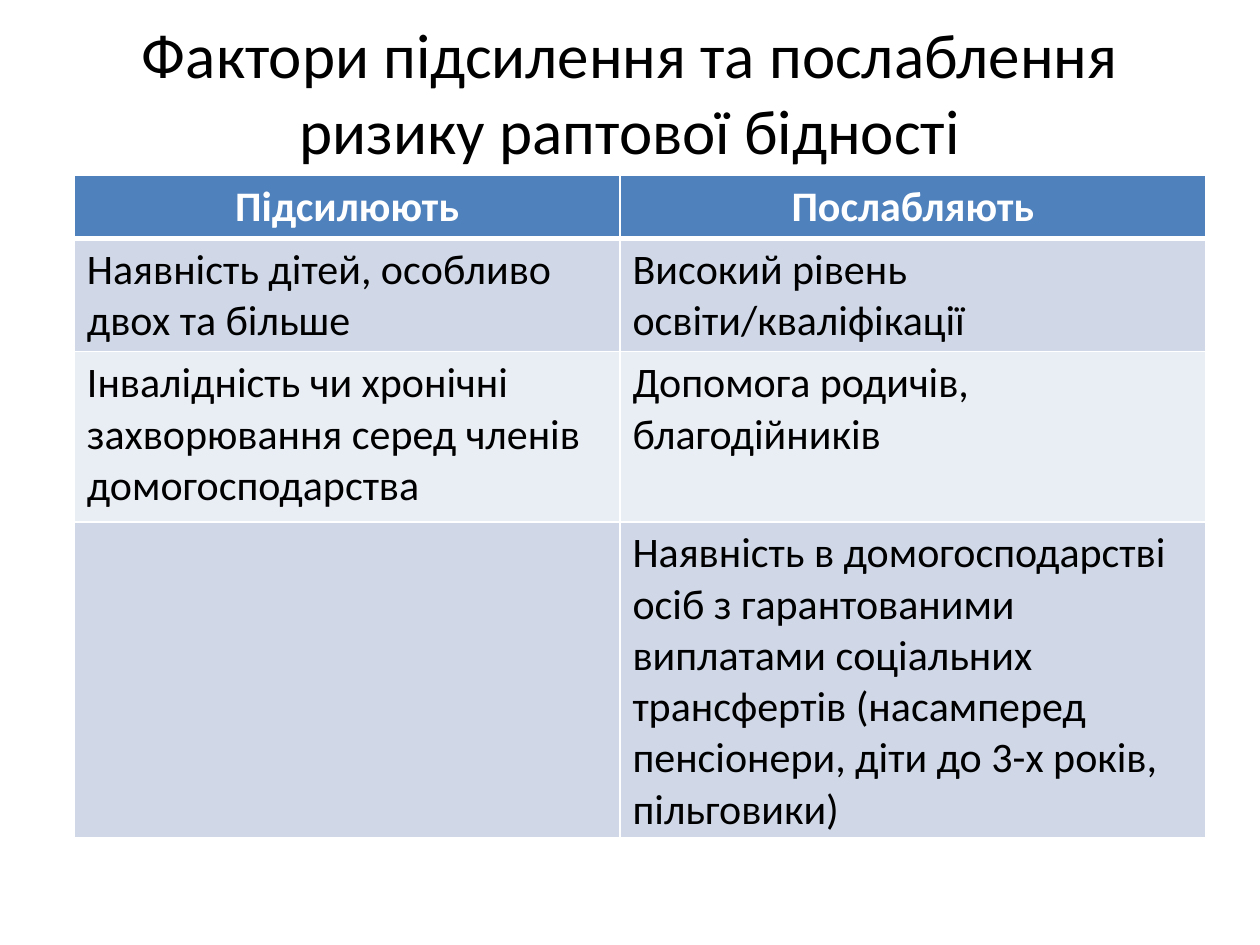
from dataclasses import dataclass

from lxml.etree import SubElement
from pptx import Presentation
from pptx.dml.color import RGBColor as RGB
from pptx.enum.text import MSO_ANCHOR as ANCHOR, PP_ALIGN as ALIGN
from pptx.oxml.ns import qn
from pptx.util import Inches, Pt


@dataclass(frozen=True)
class Theme:
    font: str = "Calibri"
    title_size: int = 36
    body_size: int = 24
    ink: str = "000000"
    line: str = "FFFFFF"
    header: str = "4F81BD"
    header_ink: str = "FFFFFF"
    bands: tuple = ("D0D8E8", "E9EDF4")
    thin: int = 1
    thick: int = 3


class SlideBuilder:
    def __init__(self, slide, theme):
        self.s = slide
        self.theme = theme

    def set_text(self, tf, text, size, color, bold=False, align=ALIGN.LEFT):
        tf.text = text
        for p in tf.paragraphs:
            p.alignment = align
            for r in p.runs:
                r.font.name = self.theme.font
                r.font.size = Pt(size)
                r.font.bold = bold
                r.font.color.rgb = RGB.from_string(color)

    def title(self, text, left, top, width, height):
        sp = self.s.shapes.add_textbox(
            Inches(left), Inches(top), Inches(width), Inches(height))
        tf = sp.text_frame
        tf.word_wrap = True
        tf.vertical_anchor = ANCHOR.MIDDLE
        self.set_text(tf, text, self.theme.title_size, self.theme.ink, align=ALIGN.CENTER)

    def borders(self, cell, top, bottom):
        tc_pr = cell._tc.get_or_add_tcPr()
        thin = self.theme.thin
        for side, width in zip("LRTB", (thin, thin, top, bottom)):
            ln = SubElement(tc_pr, qn(f"a:ln{side}"), w=str(Pt(width)))
            fill = SubElement(ln, qn("a:solidFill"))
            SubElement(fill, qn("a:srgbClr"), val=self.theme.line)

    def table(self, rows, left, top, widths, heights):
        th = self.theme
        table = self.s.shapes.add_table(
            len(rows), len(widths), Inches(left), Inches(top),
            Inches(sum(widths)), Inches(sum(heights))).table
        for column, width in zip(table.columns, widths):
            column.width = Inches(width)
        for i, (row, height) in enumerate(zip(rows, heights)):
            table.rows[i].height = Inches(height)
            is_header = i == 0
            fill = th.header if is_header else th.bands[(i - 1) % 2]
            ink = th.header_ink if is_header else th.ink
            align = ALIGN.CENTER if is_header else ALIGN.LEFT
            for j, text in enumerate(row):
                cell = table.cell(i, j)
                self.borders(cell, th.thick if i == 1 else th.thin,
                             th.thick if is_header else th.thin)
                cell.fill.solid()
                cell.fill.fore_color.rgb = RGB.from_string(fill)
                if text:
                    self.set_text(cell.text_frame, text, th.body_size, ink, is_header, align)


FACTORS = [
    ("Підсилюють", "Послабляють"),
    ("Наявність дітей, особливо двох та більше",
     "Високий рівень освіти/кваліфікації"),
    ("Інвалідність чи хронічні захворювання серед членів домогосподарства",
     "Допомога родичів, благодійників"),
    ("", "Наявність в домогосподарстві осіб з гарантованими виплатами "
         "соціальних трансфертів (насамперед пенсіонери, діти до 3-х років, "
         "пільговики)"),
]


def main():
    prs = Presentation()
    prs.slide_width, prs.slide_height = Inches(10), Inches(7.5)
    slide = SlideBuilder(prs.slides.add_slide(prs.slide_layouts[6]), Theme())
    slide.title("Фактори підсилення та послаблення ризику раптової бідності",
                0.5, 0.3, 9, 0.85)
    slide.table(FACTORS, 0.59, 1.39, (4.33, 4.65), (0.49, 0.9, 1.35, 2.51))
    prs.save("out.pptx")


if __name__ == "__main__":
    main()
